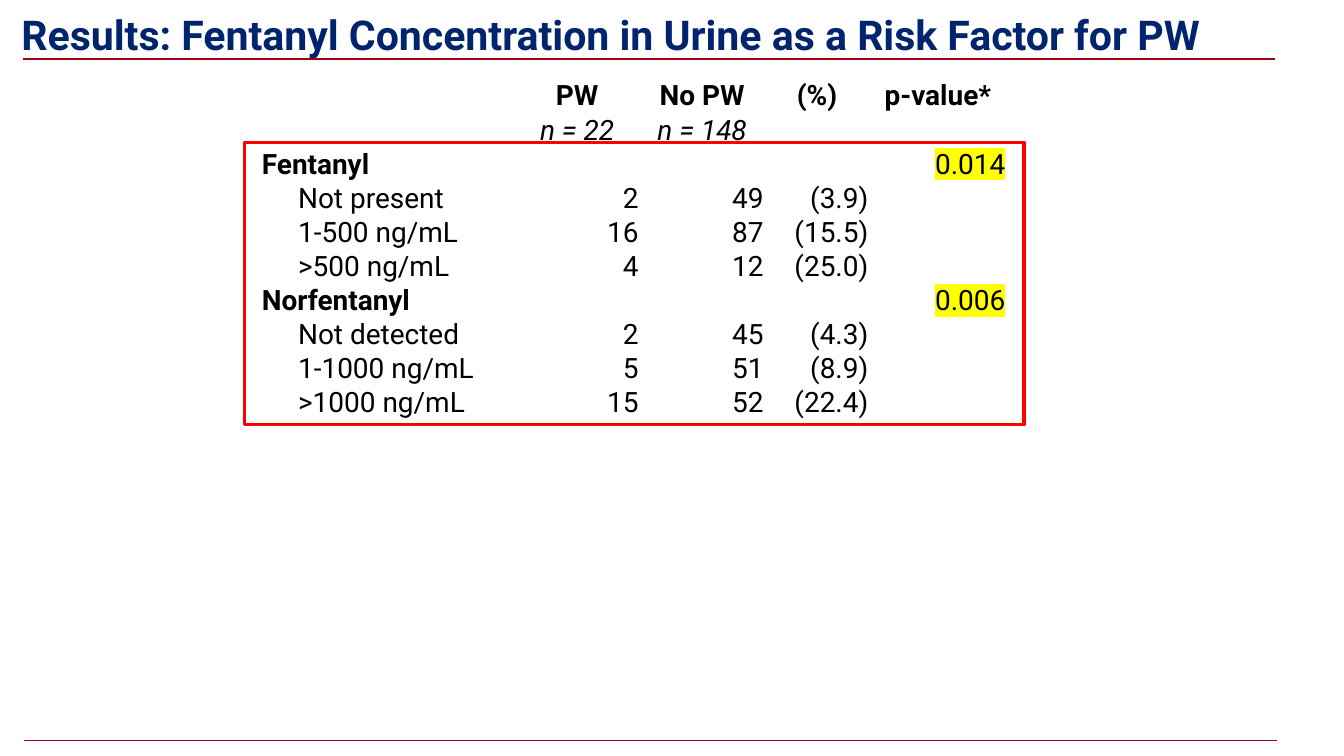
from dataclasses import dataclass
from typing import Optional

from lxml.etree import SubElement
from pptx import Presentation
from pptx.dml.color import RGBColor
from pptx.enum.shapes import MSO_CONNECTOR, MSO_SHAPE
from pptx.enum.text import MSO_ANCHOR, MSO_AUTO_SIZE, PP_ALIGN
from pptx.oxml import parse_xml
from pptx.oxml.ns import nsdecls, qn
from pptx.util import Inches, Pt


@dataclass(frozen=True)
class Theme:
    font: str = "Roboto"
    title_size: int = 22
    table_size: int = 15
    navy: str = "00246D"
    rule: str = "A00117"
    frame: str = "FF0000"
    text: str = "000000"
    paper: str = "FFFFFF"
    marker: str = "FFFF00"


@dataclass(frozen=True)
class CellStyle:
    align: PP_ALIGN = PP_ALIGN.LEFT
    anchor: MSO_ANCHOR = MSO_ANCHOR.BOTTOM
    bold: bool = False
    italic: bool = False
    highlight: Optional[str] = None


@dataclass(frozen=True)
class Level:
    label: str
    pw: str
    no_pw: str
    percent: str


@dataclass(frozen=True)
class Analyte:
    name: str
    p_value: str
    levels: tuple[Level, ...]


THEME = Theme()
HEADING = CellStyle(PP_ALIGN.CENTER, bold=True)
SAMPLE = CellStyle(PP_ALIGN.CENTER, italic=True)
GROUP = CellStyle(bold=True)
LABEL = CellStyle()
NUMBER = CellStyle(PP_ALIGN.RIGHT, MSO_ANCHOR.TOP)
P_VALUE = CellStyle(PP_ALIGN.RIGHT, MSO_ANCHOR.TOP, highlight=THEME.marker)

SLIDE_WIDTH = Inches(10)
SLIDE_HEIGHT = SLIDE_WIDTH * 9 // 16
COLUMN_WIDTHS = (0.27, 1.62, 0.93, 0.93, 0.78, 1.02)
ROW_HEIGHTS = (0.26, 0.16, 0.16) + (0.15,) * 16  # minimum heights; text grows them
SPARE_GROUP_ROWS = (10, 13, 16)
HEADINGS = ("PW", "No PW", "(%)", "p-value*")
SAMPLES = ("n = 22", "n = 148")
ANALYTES = (
    Analyte("Fentanyl", "0.014", (
        Level("Not present", "2", "49", "(3.9)"),
        Level("1-500 ng/mL", "16", "87", "(15.5)"),
        Level(">500 ng/mL", "4", "12", "(25.0)"),
    )),
    Analyte("Norfentanyl", "0.006", (
        Level("Not detected", "2", "45", "(4.3)"),
        Level("1-1000 ng/mL", "5", "51", "(8.9)"),
        Level(">1000 ng/mL", "15", "52", "(22.4)"),
    )),
)


def color(value: str) -> RGBColor:
    return RGBColor.from_string(value)


def prepare_cell(cell) -> None:
    """Give a cell its fill, margins, white borders and empty-text size."""
    cell.margin_left = cell.margin_right = cell.margin_top = Pt(0.6)
    cell.margin_bottom = 0
    cell.fill.solid()
    cell.fill.fore_color.rgb = color(THEME.paper)
    properties = cell._tc.get_or_add_tcPr()
    for position, side in enumerate("LRTB"):
        properties.insert(position, parse_xml(
            f'<a:ln{side} {nsdecls("a")} w="{Pt(1)}"><a:solidFill>'
            f'<a:srgbClr val="{THEME.paper}"/></a:solidFill></a:ln{side}>'))
    end = SubElement(cell.text_frame.paragraphs[0]._p, qn("a:endParaRPr"))
    end.set("sz", str(THEME.table_size * 100))
    SubElement(end, qn("a:latin")).set("typeface", THEME.font)


def write_cell(cell, text: str, style: CellStyle) -> None:
    cell.vertical_anchor = style.anchor
    paragraph = cell.text_frame.paragraphs[0]
    paragraph.text = text
    paragraph.alignment = style.align
    run = paragraph.runs[0]
    run.font.size = Pt(THEME.table_size)
    run.font.bold = style.bold
    run.font.italic = style.italic
    run.font.color.rgb = color(THEME.text)
    run.font.name = THEME.font
    if style.highlight:
        run._r.rPr.find(qn("a:solidFill")).addnext(parse_xml(
            f'<a:highlight {nsdecls("a")}><a:srgbClr val="{style.highlight}"/>'
            '</a:highlight>'))


def merge_label(table, row: int) -> None:
    table.cell(row, 0).merge(table.cell(row, 1))


def add_results_table(slide) -> None:
    holder = slide.shapes.add_table(
        len(ROW_HEIGHTS), len(COLUMN_WIDTHS), Inches(1.94), Inches(0.58),
        Inches(sum(COLUMN_WIDTHS)), Inches(4.89))
    table = holder.table
    table.first_row = table.horz_banding = False
    for column, width in zip(table.columns, COLUMN_WIDTHS):
        column.width = Inches(width)
    for row, height in zip(table.rows, ROW_HEIGHTS):
        row.height = Inches(height)
        for cell in row.cells:
            prepare_cell(cell)
    holder.height = Inches(4.89)

    # Column headings and sample sizes
    for row, (texts, style) in enumerate(((HEADINGS, HEADING), (SAMPLES, SAMPLE))):
        for column, text in enumerate(texts, start=2):
            write_cell(table.cell(row, column), text, style)

    # One group row per analyte, followed by its concentration levels
    row = 2
    for analyte in ANALYTES:
        merge_label(table, row)
        write_cell(table.cell(row, 0), analyte.name, GROUP)
        write_cell(table.cell(row, 5), analyte.p_value, P_VALUE)
        for row, level in enumerate(analyte.levels, start=row + 1):
            write_cell(table.cell(row, 1), level.label, LABEL)
            for column, value in enumerate(
                    (level.pw, level.no_pw, level.percent), start=2):
                write_cell(table.cell(row, column), value, NUMBER)
        row += 1
    for row in SPARE_GROUP_ROWS:
        merge_label(table, row)


def add_title(slide, text: str) -> None:
    title = slide.shapes.title
    title.left, title.top = Inches(0.06), Inches(0.09)
    title.width, title.height = Inches(9.47), Inches(0.33)
    frame = title.text_frame
    frame.text = text
    frame.word_wrap = True
    frame.auto_size = MSO_AUTO_SIZE.NONE
    frame.vertical_anchor = MSO_ANCHOR.MIDDLE
    frame.margin_left = frame.margin_right = Inches(0.1)
    frame.margin_top = frame.margin_bottom = Inches(0.1)
    paragraph = frame.paragraphs[0]
    paragraph.alignment = PP_ALIGN.LEFT
    font = paragraph.runs[0].font
    font.name, font.size, font.bold = THEME.font, Pt(THEME.title_size), True
    font.color.rgb = color(THEME.navy)


def add_rule(slide, left: float, top: float) -> None:
    rule = slide.shapes.add_connector(
        MSO_CONNECTOR.STRAIGHT, Inches(left), Inches(top),
        Inches(left + 9.32), Inches(top))
    rule.line.color.rgb = color(THEME.rule)
    rule.line.width = Pt(1)
    SubElement(rule._element.spPr, qn("a:effectLst"))


def add_results_frame(slide) -> None:
    frame = slide.shapes.add_shape(
        MSO_SHAPE.RECTANGLE, Inches(1.82), Inches(1.06), Inches(5.8), Inches(2.1))
    frame.shadow.inherit = False
    frame.fill.background()
    frame.line.color.rgb = color(THEME.frame)
    frame.line.width = Pt(2)


def main() -> None:
    presentation = Presentation()
    presentation.slide_width, presentation.slide_height = SLIDE_WIDTH, SLIDE_HEIGHT
    slide = presentation.slides.add_slide(presentation.slide_layouts[5])
    add_title(slide, "Results: Fentanyl Concentration in Urine as a Risk Factor for PW")
    add_results_table(slide)
    add_results_frame(slide)
    # Rules under the title and at the foot
    add_rule(slide, 0.17, 0.44)
    add_rule(slide, 0.18, 5.51)
    presentation.save("out.pptx")


if __name__ == "__main__":
    main()
